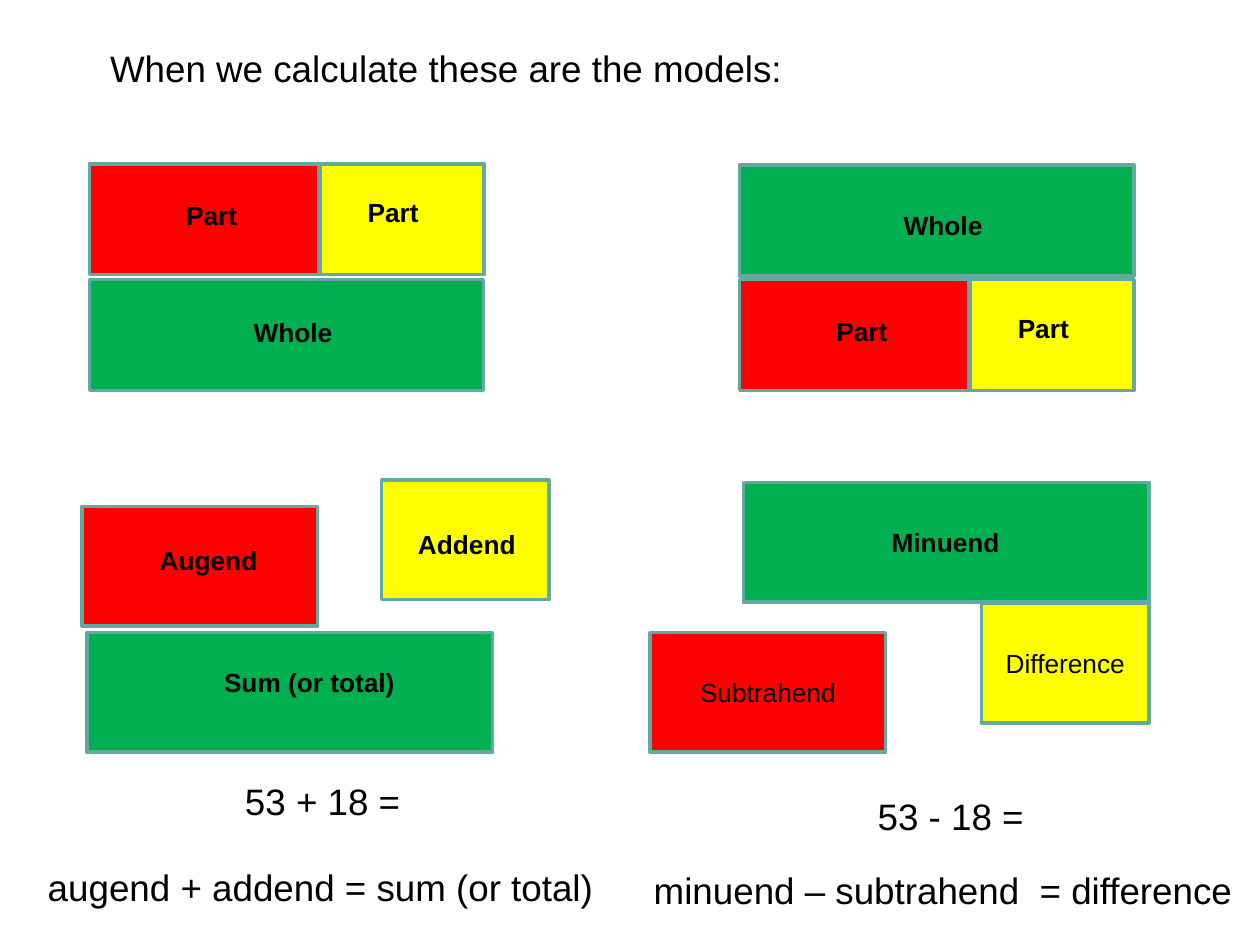
import pptx
import pptx.util
import pptx.dml.color
import pptx.enum.shapes
import pptx.enum.text

RED = pptx.dml.color.RGBColor(0xFF, 0x00, 0x00)
YELLOW = pptx.dml.color.RGBColor(0xFF, 0xFF, 0x00)
GREEN = pptx.dml.color.RGBColor(0x00, 0xB0, 0x50)
TEAL = pptx.dml.color.RGBColor(0x60, 0xAA, 0xA3)
BLACK = pptx.dml.color.RGBColor(0x00, 0x00, 0x00)
LEFT = pptx.enum.text.PP_ALIGN.LEFT
CENTER = pptx.enum.text.PP_ALIGN.CENTER
MIDDLE = pptx.enum.text.MSO_ANCHOR.MIDDLE


class Board:
    """Draws styled elements on a slide with a grid of 100 columns and 75 rows."""

    font, small, large = "Arial", 15, 21
    cols, rows = 100, 75

    def __init__(self, deck):
        self.wide = deck.slide_width / self.cols
        self.high = deck.slide_height / self.rows
        self.slide = deck.slides.add_slide(deck.slide_layouts[5])

    def area(self, x, y, w, h):
        return [round(n * unit) for n, unit in
                zip((x, y, w, h), (self.wide, self.high) * 2)]

    def words(self, para, text, size, bold=False, align=CENTER, indent=0):
        para.alignment = align
        if indent:
            para._p.get_or_add_pPr().set("marL", str(round(indent * self.wide)))
        run = para.add_run()
        run.text = text
        run.font.name = self.font
        run.font.size = pptx.util.Pt(size)
        run.font.bold = bold
        run.font.color.rgb = BLACK

    def title(self, text, *area):
        shape = self.slide.shapes.title
        shape.left, shape.top, shape.width, shape.height = self.area(*area)
        shape.text_frame.vertical_anchor = MIDDLE
        self.words(shape.text_frame.paragraphs[0], text, self.large, indent=0.9)

    def block(self, fill, x, y, w, h, text=None):
        shape = self.slide.shapes.add_shape(
            pptx.enum.shapes.MSO_SHAPE.RECTANGLE, *self.area(x, y, w, h))
        shape.shadow.inherit = False
        shape.fill.solid()
        shape.fill.fore_color.rgb = fill
        shape.line.color.rgb = TEAL
        shape.line.width = pptx.util.Pt(2)
        if text:
            frame = shape.text_frame
            frame.vertical_anchor = MIDDLE
            self.words(frame.paragraphs[0], text, self.small)

    def frame(self, *area):
        frame = self.slide.shapes.add_textbox(*self.area(*area)).text_frame
        frame.word_wrap = True
        return frame

    def label(self, text, x, y, w, h=3.5):
        para = self.frame(x, y, w, h).paragraphs[0]
        self.words(para, text, self.small, True)

    def model(self, x, part, whole, drop):
        self.block(RED, x, part, 18.2, 8.8)
        self.block(YELLOW, x + 18.3, part, 13, 8.8)
        self.block(GREEN, x, whole, 31.3, 8.8)
        self.label("Part", x + 5.1, part + 2.3, 9.2, 5.2)
        self.label("Part", x + 19.5, part + 2.1, 9.2, 5.2)
        self.label("Whole", x + 9.4, whole + drop, 13.5, 5.2)

    def sums(self, task, rule, gap, *area):
        frame = self.frame(*area)
        self.words(frame.paragraphs[0], task, self.large, indent=0.9)
        para = frame.add_paragraph()
        para.space_before = pptx.util.Pt(gap)
        self.words(para, rule, self.large, align=LEFT, indent=0.9)


def main():
    deck = pptx.Presentation()
    deck.slide_width = pptx.util.Inches(10)
    deck.slide_height = pptx.util.Inches(7.5)
    board = Board(deck)
    board.title("When we calculate these are the models:", 0.9, 3.1, 68.1, 4.5)

    board.model(7.1, 13, 22.2, 2.4)
    board.model(58.7, 22.2, 13.1, 3)

    big, mid, slim = 32.2, 18.7, 13.3
    tall = 9.5
    board.block(RED, 6.5, 40.2, mid, tall)
    board.block(YELLOW, 30.3, 38.1, slim, tall)
    board.block(GREEN, 6.9, 50.2, big, tall)
    board.label("Augend", 10.4, 42.7, 12.3)
    board.label("Addend", 30.9, 41.4, 12.3)
    board.label("Sum (or total)", 15.5, 52.4, 18.1)

    board.block(RED, 51.6, 50.2, mid, tall, "Subtrahend")
    board.block(YELLOW, 77.9, 47.9, slim, tall, "Difference")
    board.block(GREEN, 59, 38.3, big, tall)
    board.label("Minuend", 66, 41.3, 18.1)

    board.sums("53 + 18 =", "augend + addend = sum (or total)", 24,
               1.9, 61.3, 46.5, 11.6)
    board.sums("53 - 18 =", "minuend – subtrahend  = difference", 17,
               50, 62.5, 50, 10.4)
    deck.save("out.pptx")


if __name__ == "__main__":
    main()
